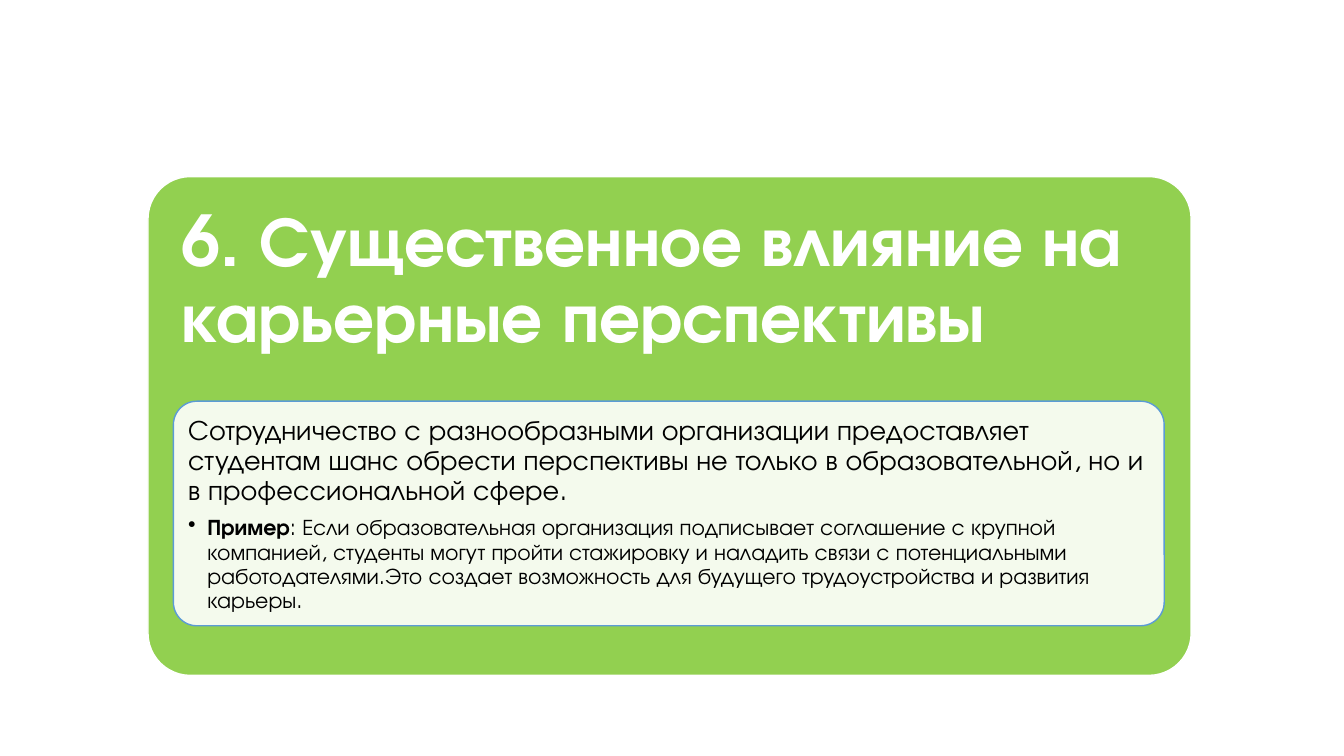
from lxml import etree
from pptx import Presentation
from pptx.dml.color import RGBColor
from pptx.enum.shapes import MSO_SHAPE as Shape
from pptx.enum.text import MSO_ANCHOR as Anchor, MSO_AUTO_SIZE as AutoSize, PP_ALIGN as Align
from pptx.oxml.ns import qn
from pptx.util import Cm, Pt

GREEN, BLUE, WHITE, BLACK = "92D050", "5B9BD5", "FFFFFF", "000000"


def color(code):
    return RGBColor.from_string(code)


class SlideBuilder:
    font_name = "TeX Gyre Adventor"
    line_spacing = 0.9

    def __init__(self, slide):
        self.slide = slide

    def set_frame(self, shape, inset, anchor):
        frame = shape.text_frame
        frame.word_wrap = True
        frame.auto_size = AutoSize.NONE
        frame.vertical_anchor = anchor
        frame.margin_left = frame.margin_right = Cm(inset)
        frame.margin_top = frame.margin_bottom = Cm(inset)
        return frame

    def style(self, paragraph, size, text_color, space_after=0):
        paragraph.alignment = Align.LEFT
        paragraph.line_spacing = self.line_spacing
        paragraph.space_before = Pt(0)
        paragraph.space_after = Pt(space_after)
        paragraph.font.name = self.font_name
        paragraph.font.size = Pt(size)
        paragraph.font.color.rgb = color(text_color)

    def title(self, text, left, top, width, height, size):
        title = self.slide.shapes.title
        title.left, title.top, title.width, title.height = map(Cm, (left, top, width, height))
        frame = self.set_frame(title, 0, Anchor.MIDDLE)
        frame.text = text
        self.style(frame.paragraphs[0], size, WHITE)
        frame.paragraphs[0].font.bold = True
        return title

    def rounded_box(self, left, top, width, height, radius, fill, line, opacity=100):
        box = self.slide.shapes.add_shape(
            Shape.ROUNDED_RECTANGLE, Cm(left), Cm(top), Cm(width), Cm(height))
        box.adjustments[0] = radius
        box.shadow.inherit = False
        box.fill.solid()
        box.fill.fore_color.rgb = color(fill)
        box.line.color.rgb = color(line)
        box.line.width = Pt(1)
        if opacity < 100:
            fill_color = box.fill._xPr.find(qn("a:solidFill"))[0]
            etree.SubElement(fill_color, qn("a:alpha"), val=str(opacity * 1000))
        return box

    def bullet(self, paragraph, indent):
        properties = paragraph._p.get_or_add_pPr()
        properties.set("marL", str(Cm(indent)))
        properties.set("indent", str(-Cm(indent)))
        etree.SubElement(properties, qn("a:buChar"), char="•")

    def body(self, box, statement, example_label, example):
        frame = self.set_frame(box, 0.2, Anchor.TOP)
        intro = frame.paragraphs[0]
        intro.text = statement
        self.style(intro, 20, BLACK, space_after=7)

        detail = frame.add_paragraph()
        self.bullet(detail, 0.48)
        label = detail.add_run()
        label.text = example_label
        label.font.bold = True
        detail.add_run().text = example
        self.style(detail, 16, BLACK)


def main():
    presentation = Presentation()
    presentation.slide_width, presentation.slide_height = Cm(33.87), Cm(19.05)
    builder = SlideBuilder(presentation.slides.add_slide(presentation.slide_layouts[5]))

    # Green card with the heading in front of it
    card = builder.rounded_box(3.73, 4.45, 26.29, 12.57, 0.085, GREEN, WHITE)
    title = builder.title("6. Существенное влияние на карьерные перспективы",
                          4.57, 5.28, 24.59, 3.63, 50)
    card._element.addnext(title._element)

    # Pale panel with the explanation and the example
    panel = builder.rounded_box(4.37, 10.11, 24.97, 5.66, 0.105, WHITE, BLUE, opacity=90)
    builder.body(
        panel,
        "Сотрудничество с разнообразными организации предоставляет студентам шанс обрести "
        "перспективы не только в образовательной, но и в профессиональной сфере.",
        "Пример",
        ": Если образовательная организация подписывает соглашение с крупной компанией, "
        "студенты могут пройти стажировку и наладить связи с потенциальными "
        "работодателями.Это создает возможность для будущего трудоустройства и развития карьеры.")

    presentation.save("out.pptx")


if __name__ == "__main__":
    main()
